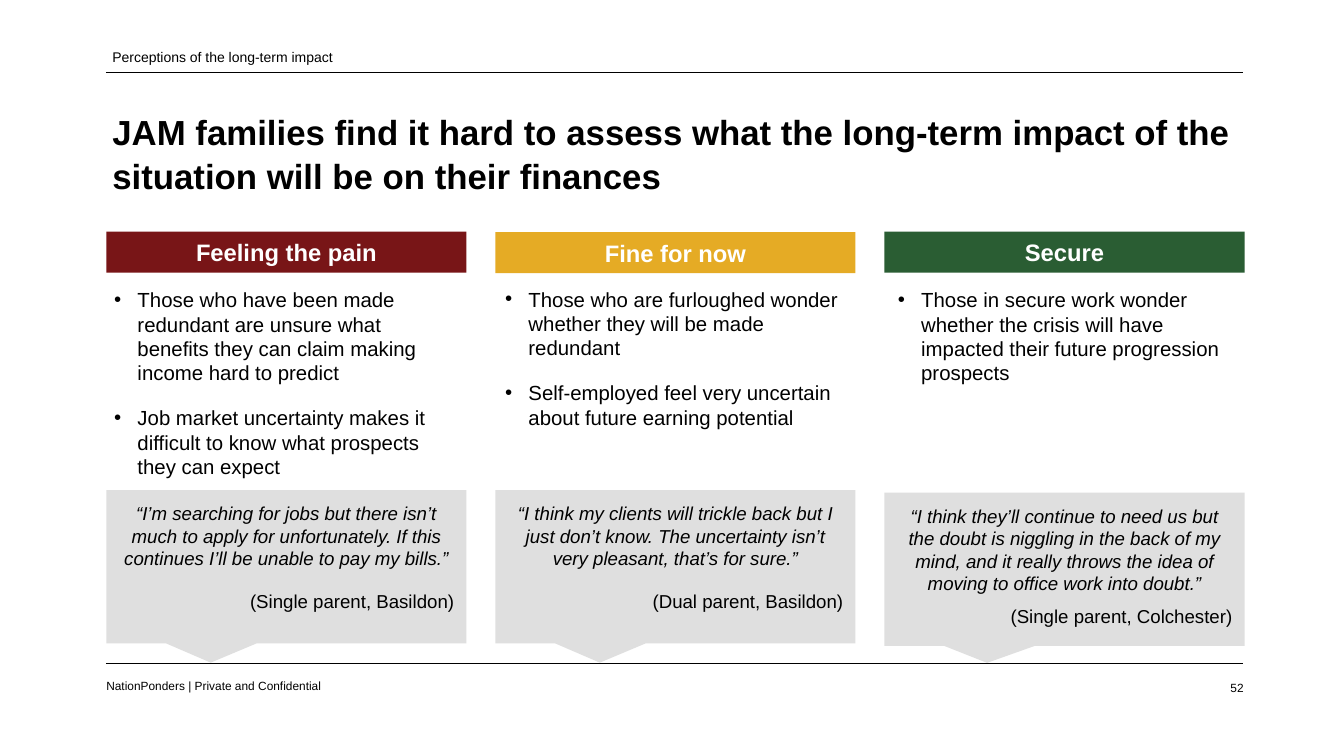
from dataclasses import dataclass

from lxml.etree import SubElement
from pptx import Presentation
from pptx.dml.color import RGBColor
from pptx.enum.shapes import MSO_CONNECTOR as Connector, MSO_SHAPE as Preset
from pptx.enum.text import MSO_ANCHOR as Anchor, PP_ALIGN as Align
from pptx.oxml.ns import qn
from pptx.util import Inches, Pt

WIDTH, HEIGHT = Inches(21.99), Inches(12.37)


@dataclass(frozen=True)
class Theme:
    font: str = "Arial"
    black: str = "000000"
    white: str = "FFFFFF"
    quote_fill: str = "DFDFDF"
    red: str = "781517"
    amber: str = "E5AB25"
    green: str = "2A5D33"
    title: float = 41
    heading: float = 28
    body: float = 24
    quote: float = 22
    topic: float = 16.5
    footer: float = 14
    rule: float = 0.75


@dataclass(frozen=True)
class Grid:
    """Column and row positions, in percent of the slide's width and height."""
    left: float = 7.91
    column: float = 26.79
    pitch: float = 28.95
    span: float = 84.63
    rule_left: float = 7.87
    rule_right: float = 92.45
    topic: float = 6.22
    top_rule: float = 9.54
    title: float = 13.99
    heading: float = 30.64
    body: float = 36.38
    quote: float = 64.83
    bottom_rule: float = 87.71
    footer: float = 89.98
    small_row: float = 2.67
    title_row: float = 12.45
    heading_row: float = 5.42
    body_row: float = 24.25
    quote_row: float = 20.29
    inset: float = 0.91
    bullet_indent: float = 1.82
    bullet_hang: float = 1.73


@dataclass(frozen=True)
class Box:
    left: float
    top: float
    width: float
    height: float

    def emu(self) -> tuple[int, int, int, int]:
        return across(self.left), down(self.top), across(self.width), down(self.height)


@dataclass(frozen=True)
class Group:
    heading: str
    fill: str
    points: tuple[str, ...]
    quote: str
    speaker: str
    body_shift: float = 0
    heading_drop: float = 0
    body_drop: float = 0
    quote_drop: float = 0
    quote_space: float = 18
    tail: tuple[float, float] = (-0.21, 0.625)


THEME, GRID = Theme(), Grid()

GROUPS = (
    Group("Feeling the pain", THEME.red,
          ("Those who have been made redundant are unsure what benefits they can claim "
           "making income hard to predict",
           "Job market uncertainty makes it difficult to know what prospects they can expect"),
          "“I’m searching for jobs but there isn’t much to apply for unfortunately. "
          "If this continues I’ll be unable to pay my bills.”",
          "(Single parent, Basildon)", body_shift=-0.41),
    Group("Fine for now", THEME.amber,
          ("Those who are furloughed wonder whether they will be made redundant",
           "Self-employed feel very uncertain about future earning potential"),
          "“I think my clients will trickle back but I just don’t know. "
          "The uncertainty isn’t very pleasant, that’s for sure.”",
          "(Dual parent, Basildon)", body_shift=-0.27, heading_drop=0.08, body_drop=-0.08),
    Group("Secure", THEME.green,
          ("Those in secure work wonder whether the crisis will have impacted "
           "their future progression prospects",),
          "“I think they’ll continue to need us but the doubt is niggling in the back of my mind, "
          "and it really throws the idea of moving to office work into doubt.”",
          "(Single parent, Colchester)", quote_drop=0.33, quote_space=6, tail=(-0.215, 0.61)),
)


def across(share: float) -> int:
    return round(WIDTH * share / 100)


def down(share: float) -> int:
    return round(HEIGHT * share / 100)


def set_frame(shape, anchor=Anchor.TOP, side: float = GRID.inset, edge: int | None = None):
    """Wrap the text and set its insets; edge is the inset above and below."""
    frame = shape.text_frame
    frame.word_wrap = True
    frame.vertical_anchor = anchor
    frame.margin_left = frame.margin_right = across(side)
    frame.margin_top = frame.margin_bottom = across(side) if edge is None else edge
    return frame


def write(paragraph, text: str, size: float, color: str = THEME.black, align=Align.LEFT,
          bold: bool = False, italic: bool = False, before: float = 0, after: float = 0) -> None:
    paragraph.alignment = align
    paragraph.space_before, paragraph.space_after = Pt(before), Pt(after)
    run = paragraph.add_run()
    run.text = text
    font = run.font
    font.name, font.size, font.bold, font.italic = THEME.font, Pt(size), bold, italic
    font.color.rgb = RGBColor.from_string(color)


def add_label(slide, box: Box, text: str, size: float, side: float = 0, edge: int = 0,
              anchor=Anchor.TOP, align=Align.LEFT, bold: bool = False):
    frame = set_frame(slide.shapes.add_textbox(*box.emu()), anchor, side, edge)
    write(frame.paragraphs[0], text, size, align=align, bold=bold)
    return frame.paragraphs[0]


def add_filled(slide, preset, box: Box, fill: str):
    shape = slide.shapes.add_shape(preset, *box.emu())
    shape.shadow.inherit = False
    shape.fill.solid()
    shape.fill.fore_color.rgb = RGBColor.from_string(fill)
    shape.line.fill.background()
    return shape


def add_rule(slide, row: float) -> None:
    line = slide.shapes.add_connector(Connector.STRAIGHT, across(GRID.rule_left), down(row),
                                      across(GRID.rule_right), down(row))
    line.line.width = Pt(THEME.rule)
    line.line.color.rgb = RGBColor.from_string(THEME.black)
    SubElement(line._element.spPr, qn("a:effectLst"))


def add_bullet(paragraph) -> None:
    properties = paragraph._p.get_or_add_pPr()
    properties.set("marL", str(across(GRID.bullet_indent)))
    properties.set("indent", str(-across(GRID.bullet_hang)))
    SubElement(properties, qn("a:buFont"), typeface=THEME.font)
    SubElement(properties, qn("a:buChar"), char="•")


def add_group(slide, group: Group, left: float) -> None:
    """Draw one column: heading bar, bullet points and quote."""
    bar = add_filled(slide, Preset.RECTANGLE,
                     Box(left, GRID.heading + group.heading_drop, GRID.column, GRID.heading_row),
                     group.fill)
    write(set_frame(bar, Anchor.MIDDLE, edge=0).paragraphs[0], group.heading, THEME.heading,
          THEME.white, Align.CENTER, bold=True)

    body = slide.shapes.add_textbox(*Box(left + group.body_shift, GRID.body + group.body_drop,
                                         GRID.column, GRID.body_row).emu())
    frame = set_frame(body)
    for index, point in enumerate(group.points):
        paragraph = frame.add_paragraph() if index else frame.paragraphs[0]
        write(paragraph, point, THEME.body, before=18, after=6)
        add_bullet(paragraph)

    callout = add_filled(slide, Preset.RECTANGULAR_CALLOUT,
                         Box(left, GRID.quote + group.quote_drop, GRID.column, GRID.quote_row),
                         THEME.quote_fill)
    callout.adjustments[0], callout.adjustments[1] = group.tail
    frame = set_frame(callout)
    write(frame.paragraphs[0], group.quote, THEME.quote, align=Align.CENTER, italic=True,
          before=group.quote_space, after=6)
    write(frame.add_paragraph(), group.speaker, THEME.quote, align=Align.RIGHT,
          before=group.quote_space, after=6)


def main() -> None:
    presentation = Presentation()
    presentation.slide_width, presentation.slide_height = WIDTH, HEIGHT
    slide = presentation.slides.add_slide(presentation.slide_layouts[6])

    for row in (GRID.bottom_rule, GRID.top_rule):
        add_rule(slide, row)
    title = add_label(slide, Box(GRID.left, GRID.title, GRID.span, GRID.title_row),
                      "JAM families find it hard to assess what the long-term impact of the "
                      "situation will be on their finances",
                      THEME.title, side=0.45, anchor=Anchor.MIDDLE, bold=True)
    title.line_spacing = 1.05
    add_label(slide, Box(89.77, GRID.footer, 2.77, GRID.small_row), "52", THEME.footer,
              align=Align.RIGHT)
    footer = add_label(slide, Box(GRID.left, GRID.footer, 20.51, GRID.small_row),
                       "NationPonders | Private and Confidential", THEME.footer)
    footer.line_spacing = Pt(15.2)
    for index, group in enumerate(GROUPS):
        add_group(slide, group, GRID.left + index * GRID.pitch)
    add_label(slide, Box(GRID.left, GRID.topic, 46.98, GRID.small_row),
              "Perceptions of the long-term impact", THEME.topic, side=0.45, anchor=Anchor.MIDDLE)

    presentation.save("out.pptx")


if __name__ == "__main__":
    main()
